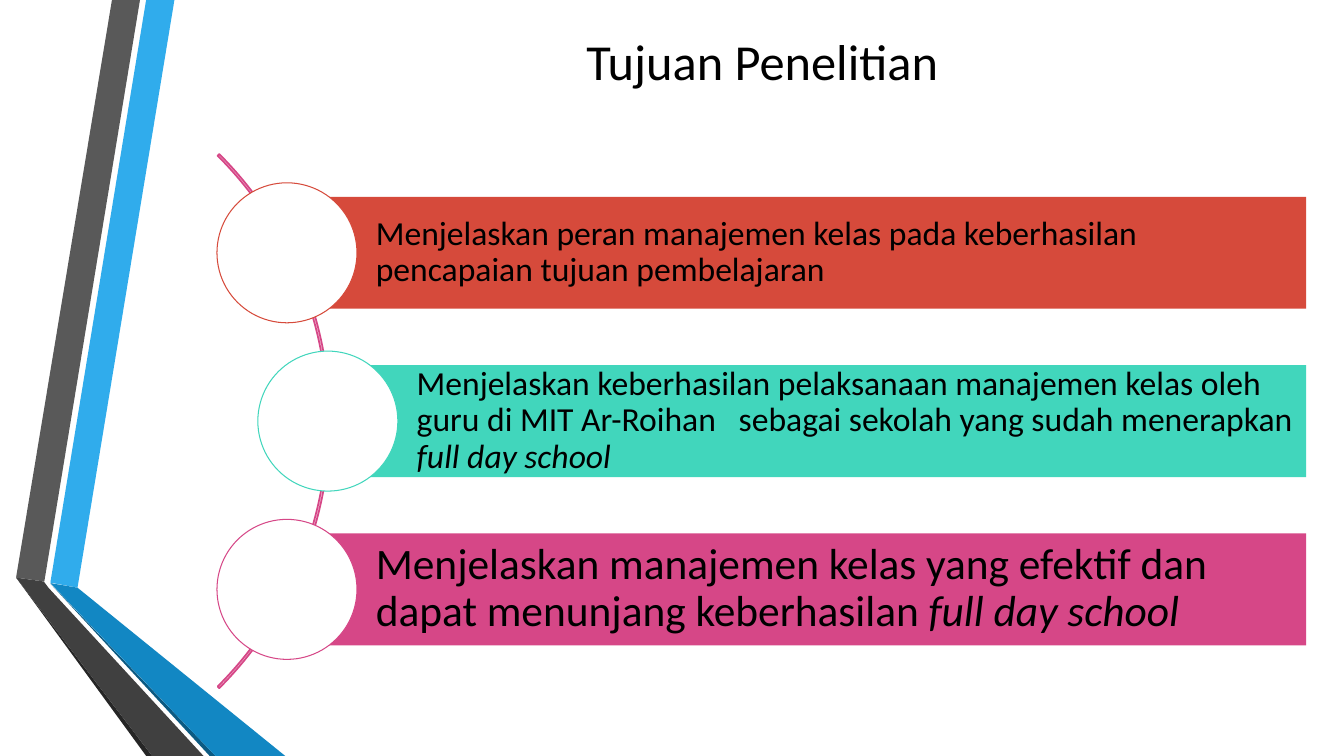
"""Build the research objectives slide with a curved list of three aims."""
import pptx
import pptx.dml.color
import pptx.enum.shapes
import pptx.enum.text
import pptx.util

Pt = pptx.util.Pt
RGBColor = pptx.dml.color.RGBColor
MSO_SHAPE = pptx.enum.shapes.MSO_SHAPE
PP_ALIGN = pptx.enum.text.PP_ALIGN
MSO_ANCHOR = pptx.enum.text.MSO_ANCHOR

FONT = "Calibri"
BLACK = RGBColor(0x00, 0x00, 0x00)
WHITE = RGBColor(0xFF, 0xFF, 0xFF)
RED = RGBColor(0xD6, 0x4A, 0x3B)
TEAL = RGBColor(0x41, 0xD6, 0xBC)
PINK = RGBColor(0xD6, 0x47, 0x87)
BLUE = RGBColor(0x30, 0xAC, 0xEC)
BLUE_MID = RGBColor(0x12, 0x87, 0xC3)
BLUE_DARK = RGBColor(0x0C, 0x5A, 0x82)
GREY = RGBColor(0x59, 0x59, 0x59)
GREY_MID = RGBColor(0x40, 0x40, 0x40)
GREY_DARK = RGBColor(0x26, 0x26, 0x26)

RIBBONS = [
    (BLUE, [(36, 416.2), (55.4, 419.8), (124.6, 0), (104.4, 0)]),
    (GREY, [(100, 0), (80, 0), (11.5, 412.6), (31.7, 415.4)]),
    (GREY_DARK, [(11.5, 412.6), (104.4, 540), (108.7, 540)]),
    (BLUE_DARK, [(36, 416.9), (149.8, 540), (154, 540)]),
    (BLUE_MID, [(36, 416.5), (154, 540), (203.8, 540), (55.4, 419.8)]),
    (GREY_MID, [(145.4, 540), (34.6, 419.8), (31.3, 415.4), (11.5, 412.6), (108.7, 540)]),
]

AIMS = [
    (RED, 205, 24, 5,
     [("Menjelaskan peran manajemen kelas pada keberhasilan pencapaian tujuan pembelajaran", False)]),
    (TEAL, 234.2, 24, 5,
     [("Menjelaskan keberhasilan pelaksanaan manajemen kelas oleh guru di MIT Ar-Roihan   "
       "sebagai sekolah yang sudah menerapkan ", False),
      ("full day school", True)]),
    (PINK, 205, 31, 6.5,
     [("Menjelaskan manajemen kelas yang efektif dan dapat menunjang keberhasilan ", False),
      ("full day school", True)]),
]
BAR_TOP, BAR_PITCH, BAR_HEIGHT, BAR_RIGHT = 140.6, 120.2, 80, 933
CIRCLE_SIZE = 100
ARC_LEFT, ARC_SIZE = -303.8, 539.4


def add_run(paragraph, text, size, italic=False):
    run = paragraph.add_run()
    run.text = text
    run.font.name = FONT
    run.font.size = Pt(size)
    run.font.color.rgb = BLACK
    if italic:
        run.font.italic = True


def paint(shape, fill=None, line=None, width=0.75):
    shape.shadow.inherit = False
    if fill is None:
        shape.fill.background()
    else:
        shape.fill.solid()
        shape.fill.fore_color.rgb = fill
    if line is None:
        shape.line.fill.background()
    else:
        shape.line.color.rgb = line
        shape.line.width = Pt(width)


def add_preset(slide, kind, left, top, width, height):
    return slide.shapes.add_shape(kind, Pt(left), Pt(top), Pt(width), Pt(height))


def add_ribbon(slide, color, corners):
    start, *others = [(Pt(x), Pt(y)) for x, y in corners]
    outline = slide.shapes.build_freeform(*start)
    outline.add_line_segments(others, close=True)
    paint(outline.convert_to_shape(), color)


def set_title(slide, text):
    title = slide.shapes.title
    title.left, title.top, title.width, title.height = Pt(150), Pt(17.3), Pt(789), Pt(52)
    frame = title.text_frame
    frame.vertical_anchor = MSO_ANCHOR.MIDDLE
    frame.paragraphs[0].alignment = PP_ALIGN.CENTER
    add_run(frame.paragraphs[0], text, 36)


def add_arc(slide):
    middle = BAR_TOP + BAR_PITCH + BAR_HEIGHT / 2
    arc = add_preset(slide, MSO_SHAPE.BLOCK_ARC, ARC_LEFT, middle - ARC_SIZE / 2, ARC_SIZE, ARC_SIZE)
    for index, value in enumerate((189, 27, 0.003)):
        arc.adjustments[index] = value
    paint(arc, line=PINK, width=1.25)


def add_aim(slide, top, color, left, size, inset, runs):
    bar = add_preset(slide, MSO_SHAPE.RECTANGLE, left, top, BAR_RIGHT - left, BAR_HEIGHT)
    paint(bar, color)
    frame = bar.text_frame
    frame.word_wrap = True
    frame.vertical_anchor = MSO_ANCHOR.MIDDLE
    frame.margin_left = Pt(63.5)
    frame.margin_top = frame.margin_right = frame.margin_bottom = Pt(inset)
    paragraph = frame.paragraphs[0]
    paragraph.alignment = PP_ALIGN.LEFT
    paragraph.line_spacing = 0.9
    for text, italic in runs:
        add_run(paragraph, text, size, italic)
    circle = add_preset(slide, MSO_SHAPE.OVAL, left - CIRCLE_SIZE / 2,
                        top + (BAR_HEIGHT - CIRCLE_SIZE) / 2, CIRCLE_SIZE, CIRCLE_SIZE)
    paint(circle, WHITE, color)


def main():
    deck = pptx.Presentation()
    deck.slide_width, deck.slide_height = Pt(960), Pt(540)
    slide = deck.slides.add_slide(deck.slide_layouts.get_by_name("Title Only"))
    for color, corners in RIBBONS:
        add_ribbon(slide, color, corners)
    set_title(slide, "Tujuan Penelitian")
    add_arc(slide)
    for row, aim in enumerate(AIMS):
        add_aim(slide, BAR_TOP + row * BAR_PITCH, *aim)
    deck.save("out.pptx")


if __name__ == "__main__":
    main()
